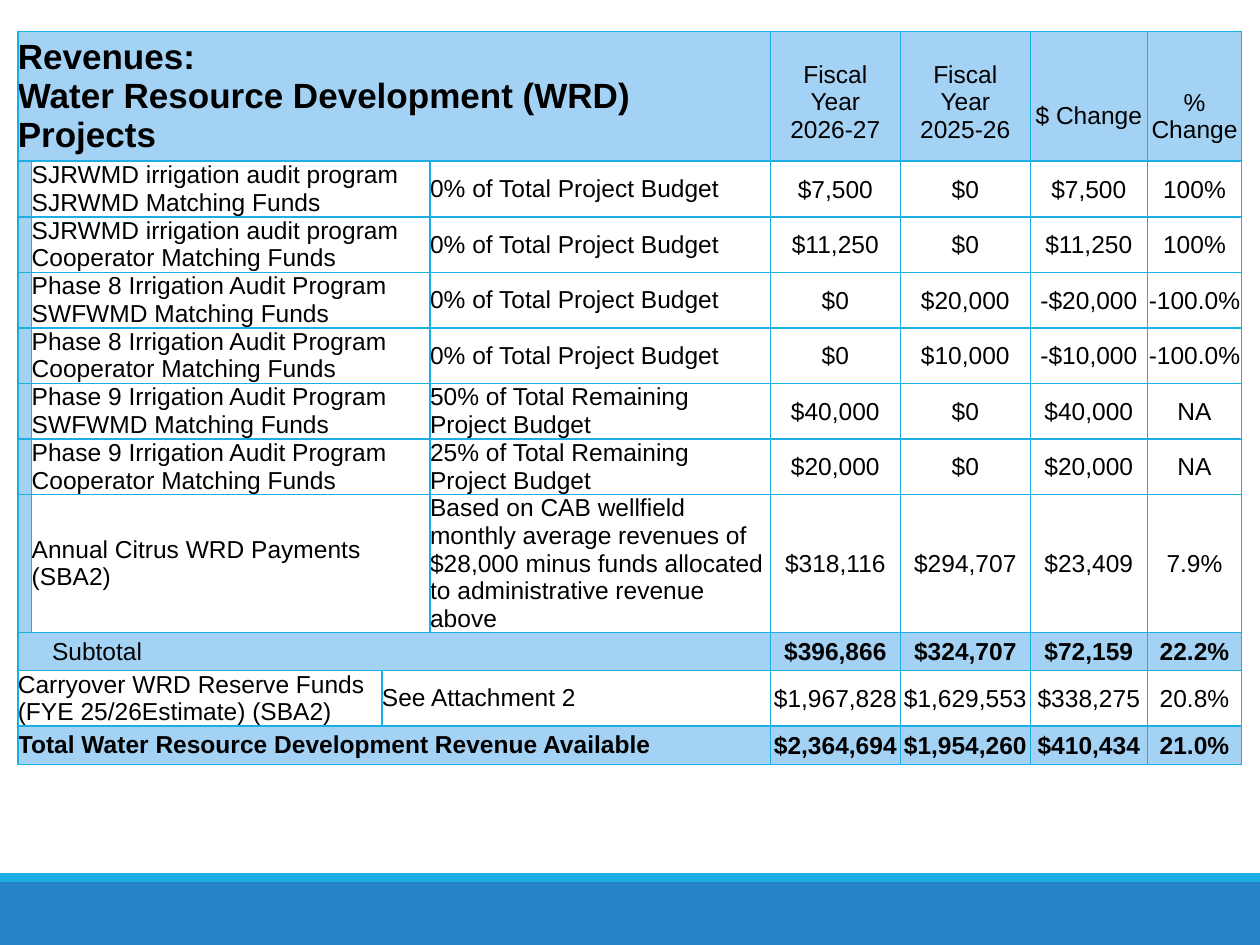
from dataclasses import dataclass

from lxml import etree
from pptx import Presentation
from pptx.dml.color import RGBColor
from pptx.enum import shapes, text
from pptx.oxml import ns
from pptx.util import Cm, Pt


@dataclass(frozen=True)
class Theme:
    font: str = "Arial"
    ink: str = "000000"
    white: str = "FFFFFF"
    tint: str = "A4D2F4"
    border: str = "1CADE4"
    band: str = "2683C6"
    title_size: int = 20
    body_size: int = 14
    border_width: int = 1


THEME = Theme()

TITLE = ["Revenues:", "Water Resource Development (WRD) Projects"]
# Lines of each heading and the top inset (cm) that lowers it in the header row
HEADINGS = [
    (["Fiscal", "Year", "2026-27"], 0.25),
    (["Fiscal", "Year", "2025-26"], 0.25),
    (["$ Change"], 0.81),
    (["% Change"], 0.81),
]
PROJECTS = [
    ("SJRWMD irrigation audit program SJRWMD Matching Funds",
     "0% of Total Project Budget", ["$7,500", "$0", "$7,500", "100%"]),
    ("SJRWMD irrigation audit program Cooperator Matching Funds",
     "0% of Total Project Budget", ["$11,250", "$0", "$11,250", "100%"]),
    ("Phase 8 Irrigation Audit Program SWFWMD Matching Funds",
     "0% of Total Project Budget", ["$0", "$20,000", "-$20,000", "-100.0%"]),
    ("Phase 8 Irrigation Audit Program Cooperator Matching Funds",
     "0% of Total Project Budget", ["$0", "$10,000", "-$10,000", "-100.0%"]),
    ("Phase 9 Irrigation Audit Program SWFWMD Matching Funds",
     "50% of Total Remaining Project Budget", ["$40,000", "$0", "$40,000", "NA"]),
    ("Phase 9 Irrigation Audit Program Cooperator Matching Funds",
     "25% of Total Remaining Project Budget", ["$20,000", "$0", "$20,000", "NA"]),
    ("Annual Citrus WRD Payments (SBA2)",
     "Based on CAB wellfield monthly average revenues of $28,000 minus funds "
     "allocated to administrative revenue above",
     ["$318,116", "$294,707", "$23,409", "7.9%"]),
]
SUBTOTAL = ("Subtotal", ["$396,866", "$324,707", "$72,159", "22.2%"])
CARRYOVER = (["Carryover WRD Reserve Funds", "(FYE 25/26Estimate) (SBA2)"],
             "See Attachment 2", ["$1,967,828", "$1,629,553", "$338,275", "20.8%"])
TOTAL = ("Total Water Resource Development Revenue Available",
         ["$2,364,694", "$1,954,260", "$410,434", "21.0%"])

PAGE_WIDTH, PAGE_HEIGHT = 25.4, 19.05
TABLE_LEFT, TABLE_TOP = 0.36, 0.63
COLUMNS = [0.28, 7.06, 0.97, 6.86, 2.62, 2.62, 2.36, 1.9]
ROWS = [2.62] + [1.12] * 6 + [2.78, 0.77, 1.12, 0.77]
FIRST_VALUE = 4
SUBTOTAL_ROW = len(PROJECTS) + 1
# Top and height of the footer bands
FOOTER = [(17.78, 1.27, THEME.band), (17.6, 0.18, THEME.border)]


def add_band(page, top, height, color):
    band = page.shapes.add_shape(shapes.MSO_SHAPE.RECTANGLE,
                                 0, Cm(top), Cm(PAGE_WIDTH), Cm(height))
    band.shadow.inherit = False
    band.fill.solid()
    band.fill.fore_color.rgb = RGBColor.from_string(color)
    band.line.fill.background()


def style_cell(cell):
    """Give a cell its borders, header tint and zero insets."""
    properties = cell._tc.get_or_add_tcPr()
    for side in ("a:lnL", "a:lnR", "a:lnT", "a:lnB"):
        line = etree.SubElement(properties, ns.qn(side), w=str(Pt(THEME.border_width)))
        fill = etree.SubElement(line, ns.qn("a:solidFill"))
        etree.SubElement(fill, ns.qn("a:srgbClr"), val=THEME.border)
    paint(cell, THEME.tint)
    cell.margin_left = cell.margin_right = cell.margin_top = cell.margin_bottom = 0
    cell.vertical_anchor = text.MSO_ANCHOR.MIDDLE
    cell.text_frame.paragraphs[0].font.size = Pt(THEME.body_size)


def paint(cell, color):
    cell.fill.solid()
    cell.fill.fore_color.rgb = RGBColor.from_string(color)


def write(cell, lines, size=THEME.body_size, bold=False, center=False):
    cell.text = "\n".join(lines)
    for para in cell.text_frame.paragraphs:
        para.alignment = text.PP_ALIGN.CENTER if center else text.PP_ALIGN.LEFT
        para.font.name = THEME.font
        para.font.size = Pt(size)
        para.font.bold = bold
        para.font.color.rgb = RGBColor.from_string(THEME.ink)


def write_label(table, row, first, last, lines, **style):
    """Merge the cells from first to last and write the label there."""
    cell = table.cell(row, first)
    if last > first:
        cell.merge(table.cell(row, last))
    write(cell, lines, **style)
    return cell


def write_values(table, row, values, bold=False):
    for column, value in enumerate(values, FIRST_VALUE):
        cell = table.cell(row, column)
        write(cell, [value], bold=bold, center=True)
        cell.margin_left = cell.margin_right = cell.margin_top = Cm(0.02)


def whiten(table, row, first):
    for column in range(first, len(COLUMNS)):
        paint(table.cell(row, column), THEME.white)


def add_revenue_table(page):
    frame = page.shapes.add_table(len(ROWS), len(COLUMNS), Cm(TABLE_LEFT), Cm(TABLE_TOP),
                                  Cm(sum(COLUMNS)), Cm(sum(ROWS)))
    table = frame.table
    table.first_row = table.horz_banding = False
    for column, width in zip(table.columns, COLUMNS):
        column.width = Cm(width)
    for row, height in zip(table.rows, ROWS):
        row.height = Cm(height)
    for cell in table.iter_cells():
        style_cell(cell)

    write_label(table, 0, 0, 3, TITLE, size=THEME.title_size, bold=True)
    for column, (lines, inset) in enumerate(HEADINGS, FIRST_VALUE):
        cell = table.cell(0, column)
        write(cell, lines, center=True)
        cell.margin_top = Cm(inset)

    for row, (project, basis, values) in enumerate(PROJECTS, 1):
        whiten(table, row, 1)
        write_label(table, row, 1, 2, [project])
        write_label(table, row, 3, 3, [basis])
        write_values(table, row, values)

    label, values = SUBTOTAL
    write_label(table, SUBTOTAL_ROW, 0, 3, [label]).margin_left = Cm(0.69)
    write_values(table, SUBTOTAL_ROW, values, bold=True)

    lines, basis, values = CARRYOVER
    whiten(table, SUBTOTAL_ROW + 1, 0)
    write_label(table, SUBTOTAL_ROW + 1, 0, 1, lines)
    write_label(table, SUBTOTAL_ROW + 1, 2, 3, [basis])
    write_values(table, SUBTOTAL_ROW + 1, values)

    label, values = TOTAL
    write_label(table, SUBTOTAL_ROW + 2, 0, 3, [label], bold=True)
    write_values(table, SUBTOTAL_ROW + 2, values, bold=True)


def main():
    deck = Presentation()
    deck.slide_width, deck.slide_height = Cm(PAGE_WIDTH), Cm(PAGE_HEIGHT)
    page = deck.slides.add_slide(deck.slide_layouts[6])
    for top, height, color in FOOTER:
        add_band(page, top, height, color)
    add_revenue_table(page)
    deck.save("out.pptx")


if __name__ == "__main__":
    main()
